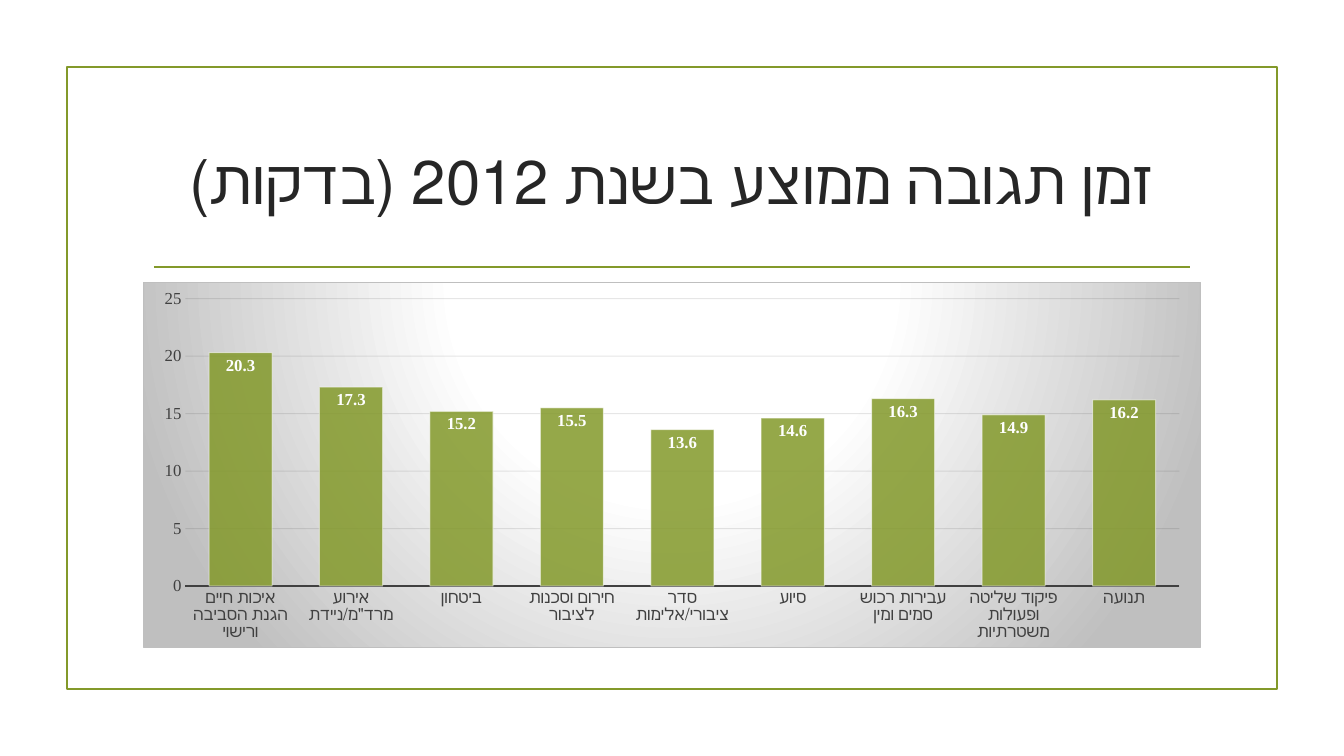
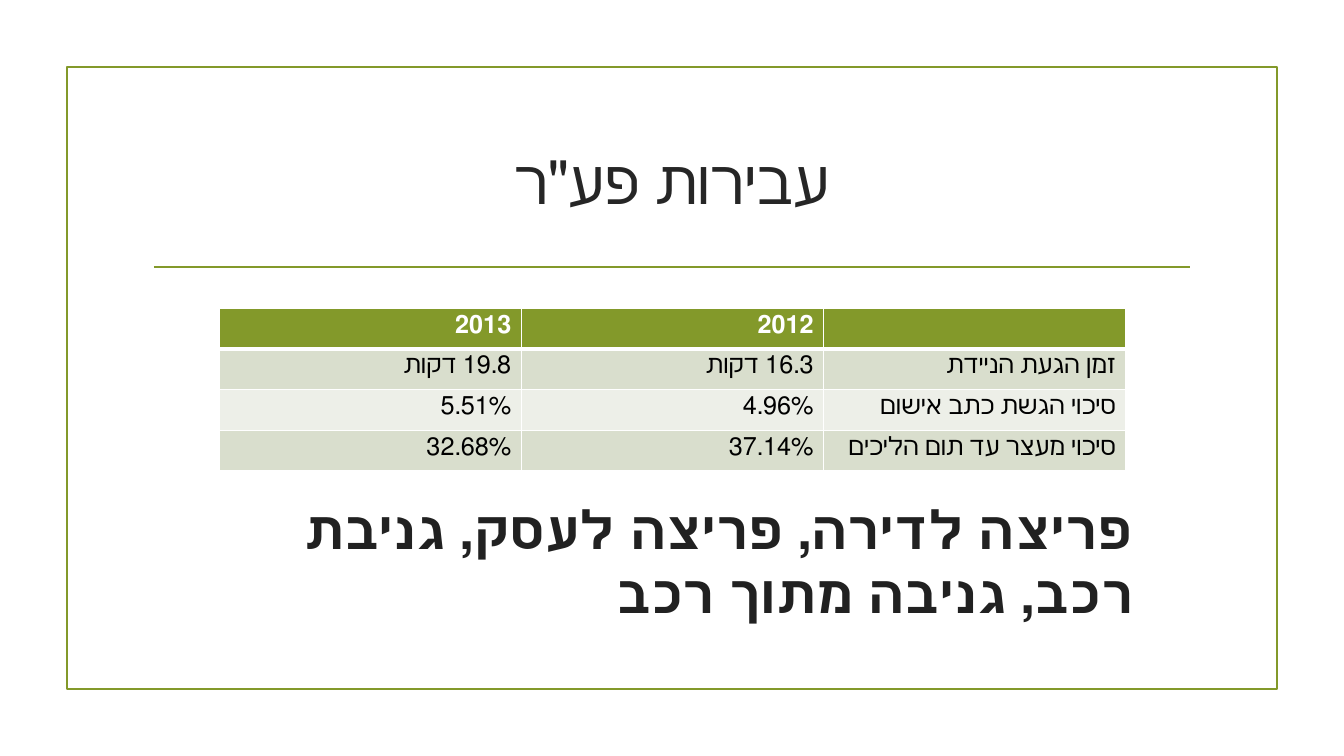
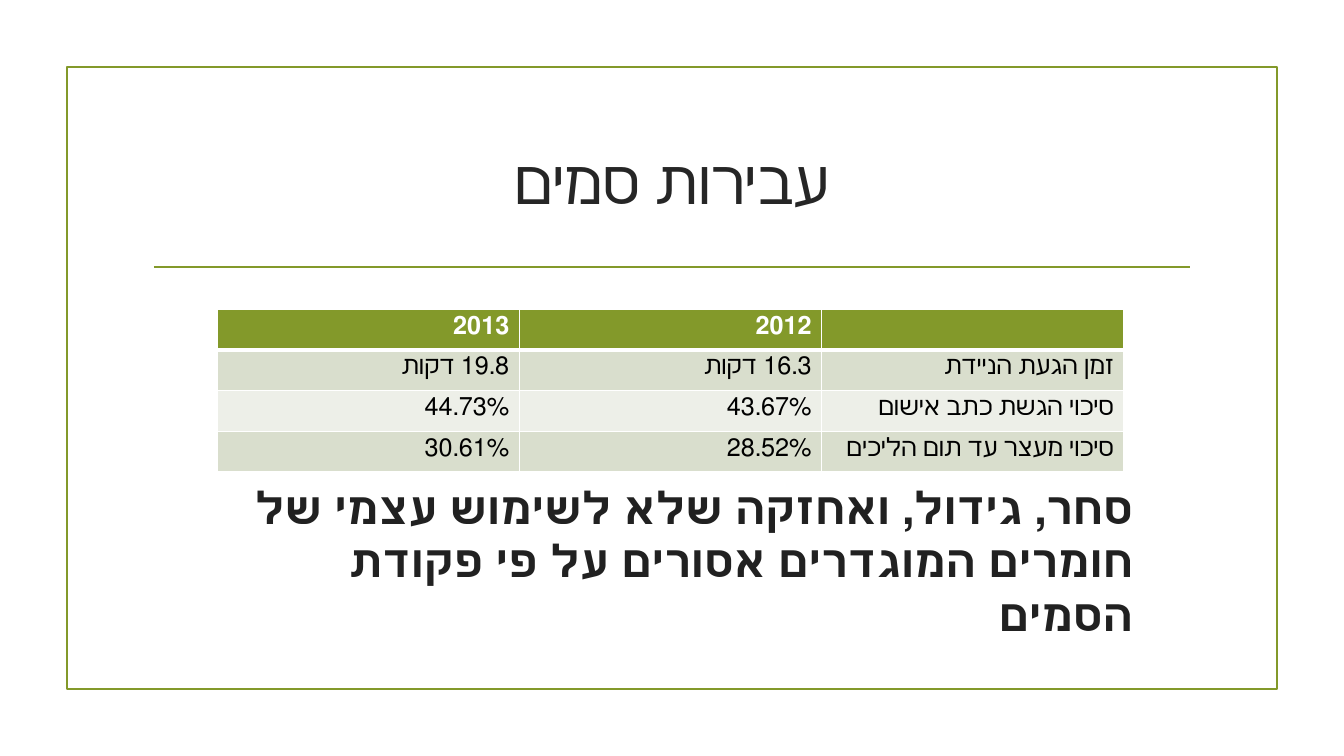
from lxml.etree import SubElement
from pptx import Presentation
from pptx.chart.data import CategoryChartData
from pptx.dml.color import RGBColor
from pptx.enum.chart import XL_CHART_TYPE, XL_LABEL_POSITION, XL_TICK_MARK
from pptx.enum.shapes import MSO_CONNECTOR, MSO_SHAPE
from pptx.enum.text import MSO_ANCHOR, PP_ALIGN
from pptx.oxml import parse_xml
from pptx.oxml.ns import nsdecls, qn
from pptx.util import Emu, Pt

COLORS = {
    "green": "83992A", "white": "FFFFFF", "black": "000000", "title": "262626",
    "note": "212121", "axis": "404040", "grid": "0D0D0D", "silver": "BFBFBF",
    "band": "D9DECD", "pale": "EDEFE8",
}
FONT = "Times New Roman"
FRAME = (67, 67, 1210, 622)

RESPONSE_TIMES = {
    "איכות חיים הגנת הסביבה ורישוי": 20.3,
    "אירוע מרד\"מ/ניידת": 17.3,
    "ביטחון": 15.2,
    "חירום וסכנות לציבור": 15.5,
    "סדר ציבורי/אלימות": 13.6,
    "סיוע": 14.6,
    "עבירות רכוש סמים ומין": 16.3,
    "פיקוד שליטה ופעולות משטרתיות": 14.9,
    "תנועה": 16.2,
}
MEASURES = ["", "זמן הגעת הניידת", "סיכוי הגשת כתב אישום", "סיכוי מעצר עד תום הליכים"]
OFFENCES = [
    {
        "title": "עבירות פע\"ר",
        "2013": ["2013", "19.8 דקות", "5.51%", "32.68%"],
        "2012": ["2012", "16.3 דקות", "4.96%", "37.14%"],
        "table": (152, 241),
        "note": "פריצה לדירה, פריצה לעסק, גניבת רכב, גניבה מתוך רכב",
        "size": 37.9,
    },
    {
        "title": "עבירות סמים",
        "2013": ["2013", "19.8 דקות", "44.73%", "30.61%"],
        "2012": ["2012", "16.3 דקות", "43.67%", "28.52%"],
        "table": (150, 242),
        "note": "סחר, גידול, ואחזקה שלא לשימוש עצמי של חומרים המוגדרים אסורים על פי פקודת הסמים",
        "size": 31.8,
    },
]


def px(n):
    """Turn pixels into EMU."""
    return Emu(round(n * 914400 / 100.8))


def rgb(name):
    """Return a palette colour."""
    return RGBColor.from_string(COLORS[name])


def style_font(font, size, color, bold=False):
    """Set face, size, colour and weight of a font."""
    font.name, font.size, font.bold = FONT, Pt(size), bold
    font.color.rgb = rgb(color)


def style_line(line, color, width):
    """Set colour and width of a line."""
    line.color.rgb = rgb(color)
    line.width = Pt(width)


def fade(element, percent):
    """Give every colour inside an element an opacity."""
    for clr in element.iter(qn("a:srgbClr")):
        SubElement(clr, qn("a:alpha")).set("val", str(percent * 1000))


def write_rtl(tf, text, size, color, bold=False, align=PP_ALIGN.RIGHT):
    """Write one right-to-left paragraph."""
    p = tf.paragraphs[0]
    p.text = text
    p.alignment = align
    p._p.get_or_add_pPr().set("rtl", "1")
    style_font(p.font, size, color, bold)


def add_text(s, box, text, size, color, bold=False, align=PP_ALIGN.RIGHT):
    """Add a wrapped, vertically centred text box."""
    tf = s.shapes.add_textbox(*map(px, box)).text_frame
    tf.word_wrap = True
    tf.vertical_anchor = MSO_ANCHOR.MIDDLE
    write_rtl(tf, text, size, color, bold, align)


def add_base(prs, title, box):
    """Add a slide with the frame, the rule and the title."""
    x, y, w, h = box
    s = prs.slides.add_slide(prs.slide_layouts[6])
    frame = s.shapes.add_shape(MSO_SHAPE.RECTANGLE, *map(px, box))
    frame.shadow.inherit = False
    frame.fill.background()
    style_line(frame.line, "green", 1.25)
    ends = (x + 87, y + 200, x + w - 87, y + 200)
    rule = s.shapes.add_connector(MSO_CONNECTOR.STRAIGHT, *map(px, ends))
    style_line(rule.line, "green", 1.25)
    SubElement(rule._element.spPr, qn("a:effectLst"))
    add_text(s, (x + 76, y + 41, w - 152, 144), title, 44, "title", align=PP_ALIGN.CENTER)
    return s


def fill_chart_area(chart):
    """Give the chart area its radial gradient and border."""
    stops = "".join(
        f'<a:gs pos="{pos * 1000}"><a:srgbClr val="{COLORS[name]}"/></a:gs>'
        for pos, name in ((0, "white"), (39, "white"), (100, "silver"))
    )
    area = parse_xml(
        f'<c:spPr {nsdecls("c", "a")}><a:gradFill><a:gsLst>{stops}</a:gsLst>'
        '<a:path path="circle"><a:fillToRect l="50000" t="-80000" r="50000" b="180000"/>'
        '</a:path></a:gradFill><a:ln w="9525"><a:solidFill>'
        f'<a:srgbClr val="{COLORS["silver"]}"/></a:solidFill></a:ln></c:spPr>'
    )
    chart._chartSpace.find(qn("c:chart")).addnext(area)


def add_columns(s, box, values):
    """Add the column chart of response times."""
    data = CategoryChartData()
    data.categories = list(values)
    data.add_series("Series 1", list(values.values()))
    chart = s.shapes.add_chart(XL_CHART_TYPE.COLUMN_CLUSTERED, *map(px, box), data).chart
    chart.has_legend = chart.has_title = False
    style_font(chart.font, 10, "black")
    fill_chart_area(chart)

    cat, val = chart.category_axis, chart.value_axis
    for axis in (cat, val):
        axis.major_tick_mark = axis.minor_tick_mark = XL_TICK_MARK.NONE
        style_font(axis.tick_labels.font, 12, "axis")
    style_line(cat.format.line, "axis", 1.5)
    val.format.line.fill.background()
    val.minimum_scale, val.maximum_scale, val.major_unit = 0, 25, 5
    style_line(val.major_gridlines.format.line, "grid", 0.75)
    fade(val._element.find(qn("c:majorGridlines")), 10)

    plot = chart.plots[0]
    plot.gap_width, plot.overlap, plot.vary_by_categories = 75, 40, False
    ser = plot.series[0]
    ser.format.fill.solid()
    ser.format.fill.fore_color.rgb = rgb("green")
    style_line(ser.format.line, "white", 0.75)
    bar = ser._element.find(qn("c:spPr"))
    fade(bar.find(qn("a:solidFill")), 85)
    fade(bar.find(qn("a:ln")), 50)
    labels = ser.data_labels
    labels.show_value = True
    labels.position = XL_LABEL_POSITION.INSIDE_END
    style_font(labels.font, 12, "white", True)


def set_borders(cell, bottom):
    """Draw white borders round a cell."""
    tcPr = cell._tc.get_or_add_tcPr()
    sides = (("lnL", 1), ("lnR", 1), ("lnT", 1), ("lnB", bottom))
    for i, (side, width) in enumerate(sides):
        tcPr.insert(i, parse_xml(
            f'<a:{side} {nsdecls("a")} w="{Pt(width)}"><a:solidFill>'
            f'<a:srgbClr val="{COLORS["white"]}"/></a:solidFill></a:{side}>'
        ))


def add_measures(s, box, columns):
    """Add a table with a green header row and banded rows."""
    rows = list(zip(*columns))
    table = s.shapes.add_table(len(rows), len(columns), *map(px, box)).table
    table.horz_banding = False
    for r, row in enumerate(rows):
        header = r == 0
        fill = "green" if header else ("pale", "band")[r % 2]
        for c, text in enumerate(row):
            cell = table.cell(r, c)
            cell.fill.solid()
            cell.fill.fore_color.rgb = rgb(fill)
            set_borders(cell, 3 if header else 1)
            write_rtl(cell.text_frame, text, 18, "white" if header else "black", header)
            if header and r + 1 < len(rows):
                continue
            if r == 1:
                top = cell._tc.tcPr.find(qn("a:lnT"))
                top.set("w", str(Pt(3)))


def chart_slide(prs, box):
    """Build the slide with the response time chart."""
    x, y, w, h = box
    s = add_base(prs, "זמן תגובה ממוצע בשנת 2012 (בדקות)", box)
    add_columns(s, (x + 76, y + 215, w - 152, 366), RESPONSE_TIMES)


def offence_slide(prs, box, offence):
    """Build a slide with a table of measures and a note."""
    x, y, w, h = box
    dx, dy = offence["table"]
    s = add_base(prs, offence["title"], box)
    columns = [offence["2013"], offence["2012"], MEASURES]
    add_measures(s, (x + dx, y + dy, 907, 163), columns)
    add_text(s, (x + 169, y + 430, 907, 126), offence["note"], offence["size"], "note", True)


def main():
    """Build and save the presentation."""
    prs = Presentation()
    prs.slide_width, prs.slide_height = px(1344), px(756)
    chart_slide(prs, FRAME)
    for offence in OFFENCES:
        offence_slide(prs, FRAME, offence)
    prs.save("out.pptx")


if __name__ == "__main__":
    main()
